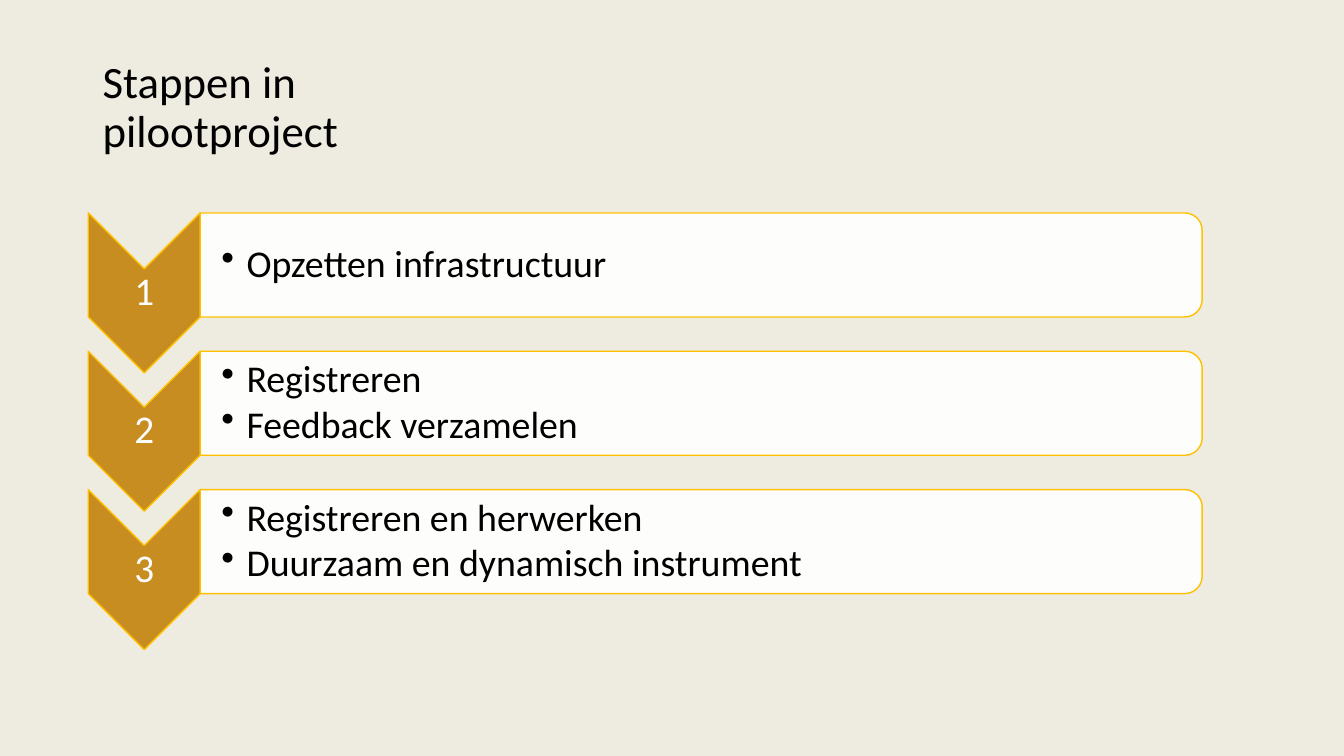
from dataclasses import dataclass

from lxml.etree import SubElement
from pptx import Presentation
from pptx.dml.color import RGBColor
from pptx.enum.shapes import MSO_SHAPE as ShapeKind
from pptx.enum.text import MSO_ANCHOR as Anchor, PP_ALIGN as Align
from pptx.oxml.ns import qn
from pptx.shapes.autoshape import Shape
from pptx.slide import Slide
from pptx.util import Pt

COLORS = {
    "base": "F2F2F2",
    "tint": "BF9000",
    "chevron": "C78D21",
    "outline": "FFC000",
    "light": "FFFFFF",
    "text": "000000",
}
FONT = "Calibri"
SLIDE_WIDTH, SLIDE_HEIGHT = 960, 540
FIRST_TOP, STEP_PITCH = 152.1, 98.8
CHEVRON_LEFT, CHEVRON_WIDTH, CHEVRON_HEIGHT = 63, 80, 114.3
BAR_LEFT, BAR_WIDTH, BAR_HEIGHT = 143, 715.7, 74.3
NUMBER_HEIGHT = 34.6
BULLET_INDENT = 18


@dataclass(frozen=True)
class Box:
    left: float
    top: float
    width: float
    height: float

    def turned(self) -> "Box":
        shift = (self.width - self.height) / 2
        return Box(self.left + shift, self.top - shift, self.height, self.width)

    def lengths(self) -> tuple[Pt, Pt, Pt, Pt]:
        return Pt(self.left), Pt(self.top), Pt(self.width), Pt(self.height)


@dataclass(frozen=True)
class TextStyle:
    size: float
    color: str
    align: Align = Align.LEFT
    insets: tuple[float, float] = (1.4, 1.4)
    space_after: float = 0
    bulleted: bool = False


@dataclass(frozen=True)
class Step:
    number: str
    actions: tuple[str, ...]


TITLE_STYLE = TextStyle(32, "text", insets=(7.2, 3.6))
NUMBER_STYLE = TextStyle(28, "light", Align.CENTER)
ACTION_STYLE = TextStyle(27, "text", insets=(15.1, 1.4), space_after=3.3, bulleted=True)

STEPS = (
    Step("1", ("Opzetten infrastructuur",)),
    Step("2", ("Registreren", "Feedback verzamelen")),
    Step("3", ("Registreren en herwerken", "Duurzaam en dynamisch instrument")),
)


def color_of(name: str) -> RGBColor:
    return RGBColor.from_string(COLORS[name])


def add_filled(slide: Slide, kind: ShapeKind, box: Box, fill: str, opacity: int = 100) -> Shape:
    shape = slide.shapes.add_shape(kind, *box.lengths())
    shape.shadow.inherit = False
    shape.fill.solid()
    shape.fill.fore_color.rgb = color_of(fill)
    shape.line.fill.background()
    if opacity < 100:
        color = shape.fill._xPr.find(qn("a:solidFill"))[0]
        SubElement(color, qn("a:alpha")).set("val", str(opacity * 1000))
    return shape


def add_turned(slide: Slide, kind: ShapeKind, box: Box, fill: str, opacity: int = 100) -> None:
    shape = add_filled(slide, kind, box.turned(), fill, opacity)
    shape.rotation = 90
    shape.line.color.rgb = color_of("outline")
    shape.line.width = Pt(1)


def add_text(slide: Slide, box: Box, lines: tuple[str, ...], style: TextStyle) -> None:
    frame = slide.shapes.add_textbox(*box.lengths()).text_frame
    frame.word_wrap = True
    frame.vertical_anchor = Anchor.MIDDLE
    left_inset, other_inset = style.insets
    frame.margin_left = Pt(left_inset)
    frame.margin_right = Pt(7.2 if style is TITLE_STYLE else other_inset)
    frame.margin_top = frame.margin_bottom = Pt(other_inset)
    frame.text = "\n".join(lines)
    for paragraph in frame.paragraphs:
        paragraph.alignment = style.align
        paragraph.line_spacing = 0.9
        paragraph.space_after = Pt(style.space_after)
        if style.bulleted:
            properties = paragraph._p.get_or_add_pPr()
            properties.set("marL", str(Pt(BULLET_INDENT)))
            properties.set("indent", str(-Pt(BULLET_INDENT)))
            SubElement(properties, qn("a:buChar")).set("char", "•")
        for run in paragraph.runs:
            run.font.name = FONT
            run.font.size = Pt(style.size)
            run.font.color.rgb = color_of(style.color)


def add_step(slide: Slide, step: Step, top: float) -> None:
    chevron = Box(CHEVRON_LEFT, top, CHEVRON_WIDTH, CHEVRON_HEIGHT)
    number_top = top + (CHEVRON_HEIGHT - NUMBER_HEIGHT) / 2
    number = Box(CHEVRON_LEFT, number_top, CHEVRON_WIDTH, NUMBER_HEIGHT)
    bar = Box(BAR_LEFT, top, BAR_WIDTH, BAR_HEIGHT)
    add_turned(slide, ShapeKind.CHEVRON, chevron, "chevron")
    add_text(slide, number, (step.number,), NUMBER_STYLE)
    add_turned(slide, ShapeKind.ROUND_2_SAME_RECTANGLE, bar, "light", 90)
    add_text(slide, bar, step.actions, ACTION_STYLE)


def main() -> None:
    presentation = Presentation()
    presentation.slide_width = Pt(SLIDE_WIDTH)
    presentation.slide_height = Pt(SLIDE_HEIGHT)
    slide = presentation.slides.add_slide(presentation.slide_layouts[6])
    backdrop = Box(0, 0, SLIDE_WIDTH, SLIDE_HEIGHT)
    add_filled(slide, ShapeKind.RECTANGLE, backdrop, "base")
    add_filled(slide, ShapeKind.RECTANGLE, backdrop, "tint", 7)
    add_text(slide, Box(66.2, 49, 325, 56.9), ("Stappen in pilootproject",), TITLE_STYLE)
    for index, step in enumerate(STEPS):
        add_step(slide, step, FIRST_TOP + index * STEP_PITCH)
    presentation.save("out.pptx")


if __name__ == "__main__":
    main()
